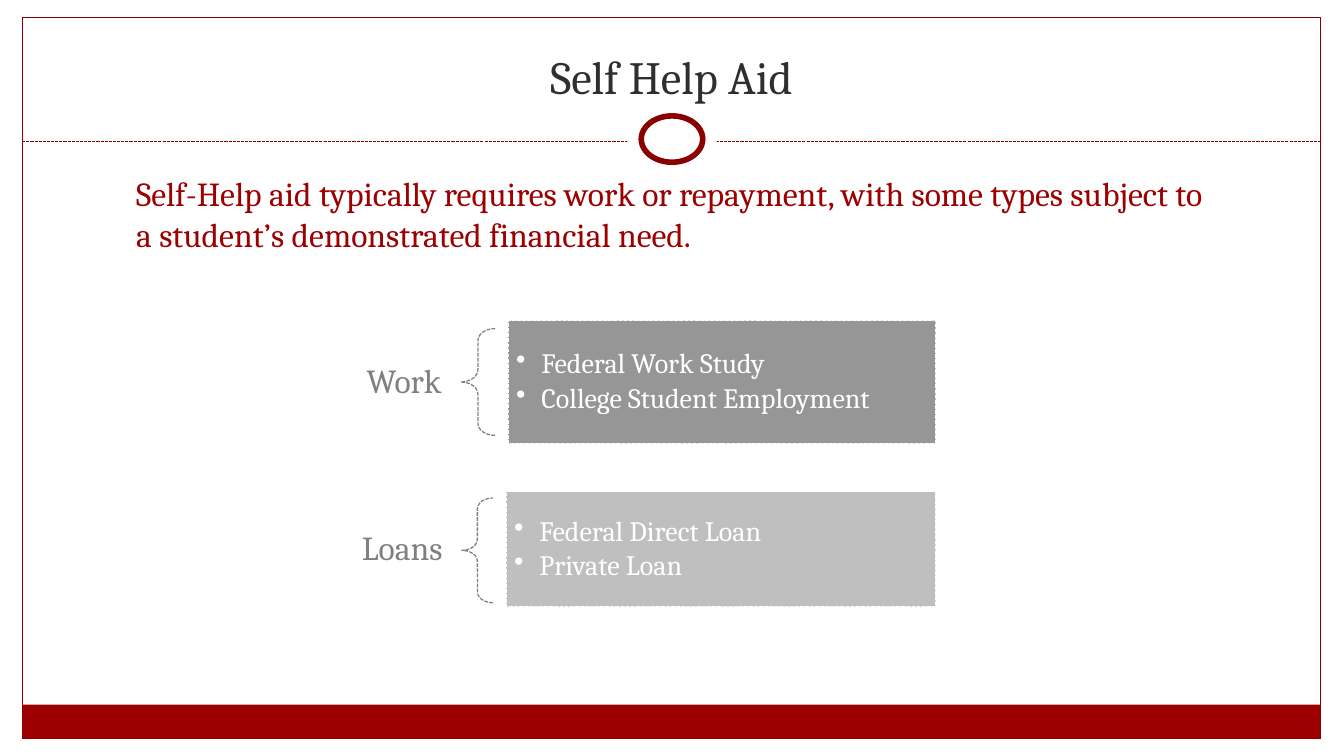
"""Build the Self Help Aid slide."""
from dataclasses import dataclass

from lxml import etree
from pptx import Presentation
from pptx.dml.color import RGBColor
from pptx.enum.dml import MSO_LINE
from pptx.enum.shapes import MSO_CONNECTOR, MSO_SHAPE
from pptx.enum.text import MSO_ANCHOR, MSO_AUTO_SIZE, PP_ALIGN
from pptx.oxml.ns import qn
from pptx.util import Pt

PX = 9144
DASH = MSO_LINE.SQUARE_DOT
RECT, OVAL, BRACE = MSO_SHAPE.RECTANGLE, MSO_SHAPE.OVAL, MSO_SHAPE.LEFT_BRACE
LEFT, CENTER, RIGHT = PP_ALIGN.LEFT, PP_ALIGN.CENTER, PP_ALIGN.RIGHT
TOP, MIDDLE, BOTTOM = MSO_ANCHOR.TOP, MSO_ANCHOR.MIDDLE, MSO_ANCHOR.BOTTOM


@dataclass(frozen=True)
class Theme:
    font: str = "Cambria"
    title: str = "2F2F2F"
    red: str = "9C0000"
    frame: str = "8A0000"
    gray: str = "808080"
    white: str = "FFFFFF"
    title_size: int = 33
    body_size: int = 24
    item_size: int = 20
    thin: float = 0.75
    dashed: float = 0.9
    ring: float = 4


@dataclass(frozen=True)
class Box:
    x: int
    y: int
    w: int
    h: int

    def emu(self) -> tuple:
        return self.x * PX, self.y * PX, self.w * PX, self.h * PX


@dataclass(frozen=True)
class AidGroup:
    name: str
    items: tuple
    label: Box
    brace: Box
    panel: Box
    color: str
    opacity: int


T = Theme()
GROUPS = (
    AidGroup("Work", ("Federal Work Study", "College Student Employment"),
             Box(301, 309, 156, 141), Box(457, 326, 34, 106),
             Box(504, 318, 424, 122), "8B8B8B", 90),
    AidGroup("Loans", ("Federal Direct Loan", "Private Loan"),
             Box(301, 475, 157, 141), Box(458, 494, 31, 104),
             Box(502, 488, 426, 114), T.gray, 50),
)


def style_line(line, color: str, width: float, dash=None) -> None:
    line.color.rgb = RGBColor.from_string(color)
    line.width = Pt(width)
    if dash is not None:
        line.dash_style = dash


def add_shape(s, kind, box: Box, fill: str = "", line: str = "",
              width: float = T.thin, dash=None, opacity: int = 100):
    sp = s.shapes.add_shape(kind, *box.emu())
    sp.shadow.inherit = False
    if fill:
        sp.fill.solid()
        sp.fill.fore_color.rgb = RGBColor.from_string(fill)
        if opacity < 100:
            clr = sp._element.spPr.find(qn("a:solidFill"))[0]
            etree.SubElement(clr, qn("a:alpha")).set("val", str(opacity * 1000))
    else:
        sp.fill.background()
    if line:
        style_line(sp.line, line, width, dash)
    else:
        sp.line.fill.background()
    return sp


def write(sp, lines: tuple, size: int, color: str, align, anchor, insets=(10, 5),
          bullet: bool = False, spacing: float = 1, after: float = 0) -> None:
    tf = sp.text_frame
    tf.word_wrap = True
    tf.auto_size = MSO_AUTO_SIZE.NONE
    tf.vertical_anchor = anchor
    tf.margin_left = tf.margin_right = insets[0] * PX
    tf.margin_top = tf.margin_bottom = insets[1] * PX
    for i, text in enumerate(lines):
        p = tf.paragraphs[0] if i == 0 else tf.add_paragraph()
        pPr = p._p.get_or_add_pPr()
        indent = 25 * PX if bullet else 0
        pPr.set("marL", str(indent))
        pPr.set("indent", str(-indent))
        if bullet:
            etree.SubElement(pPr, qn("a:buChar")).set("char", "•")
        else:
            etree.SubElement(pPr, qn("a:buNone"))
        p.alignment = align
        p.line_spacing = spacing
        p.space_before = Pt(0)
        p.space_after = Pt(after)
        r = p.add_run()
        r.text = text
        r.font.name = T.font
        r.font.size = Pt(size)
        r.font.color.rgb = RGBColor.from_string(color)


def place(sp, box: Box):
    sp.left, sp.top, sp.width, sp.height = box.emu()
    return sp


def add_frame(s) -> None:
    add_shape(s, RECT, Box(22, 699, 1288, 34), T.red)
    add_shape(s, RECT, Box(22, 17, 1288, 716), line=T.frame)
    rule = s.shapes.add_connector(MSO_CONNECTOR.STRAIGHT,
                                  22 * PX, 140 * PX, 1310 * PX, 140 * PX)
    style_line(rule.line, T.frame, T.thin, DASH)
    etree.SubElement(rule._element.spPr, qn("a:effectLst"))
    add_shape(s, OVAL, Box(622, 105, 89, 67), T.white)
    add_shape(s, OVAL, Box(636, 115, 61, 46), T.white, T.frame, T.ring)


def add_group(s, group: AidGroup) -> None:
    label = s.shapes.add_textbox(*group.label.emu())
    write(label, (group.name,), T.body_size, T.gray, RIGHT, MIDDLE, (19, 7),
          spacing=0.9)
    brace = add_shape(s, BRACE, group.brace, line=T.gray, width=T.dashed, dash=DASH)
    brace.adjustments[0] = 0.35
    panel = add_shape(s, RECT, group.panel, group.color, T.white, T.dashed, DASH,
                      group.opacity)
    write(panel, group.items, T.item_size, T.white, LEFT, MIDDLE, (8, 8),
          bullet=True, spacing=0.9, after=3)


def main() -> None:
    prs = Presentation()
    prs.slide_width, prs.slide_height = 1333 * PX, 750 * PX
    s = prs.slides.add_slide(prs.slide_layouts[1])
    title = place(s.shapes.title, Box(44, 25, 1244, 83))
    write(title, ("Self Help Aid",), T.title_size, T.title, CENTER, BOTTOM)
    body = place(s.placeholders[1], Box(125, 167, 1100, 500))
    write(body, ("Self-Help aid typically requires work or repayment, with some types "
                 "subject to a student’s demonstrated financial need.",),
          T.body_size, T.red, LEFT, TOP)
    add_frame(s)
    for group in GROUPS:
        add_group(s, group)
    prs.save("out.pptx")


if __name__ == "__main__":
    main()
